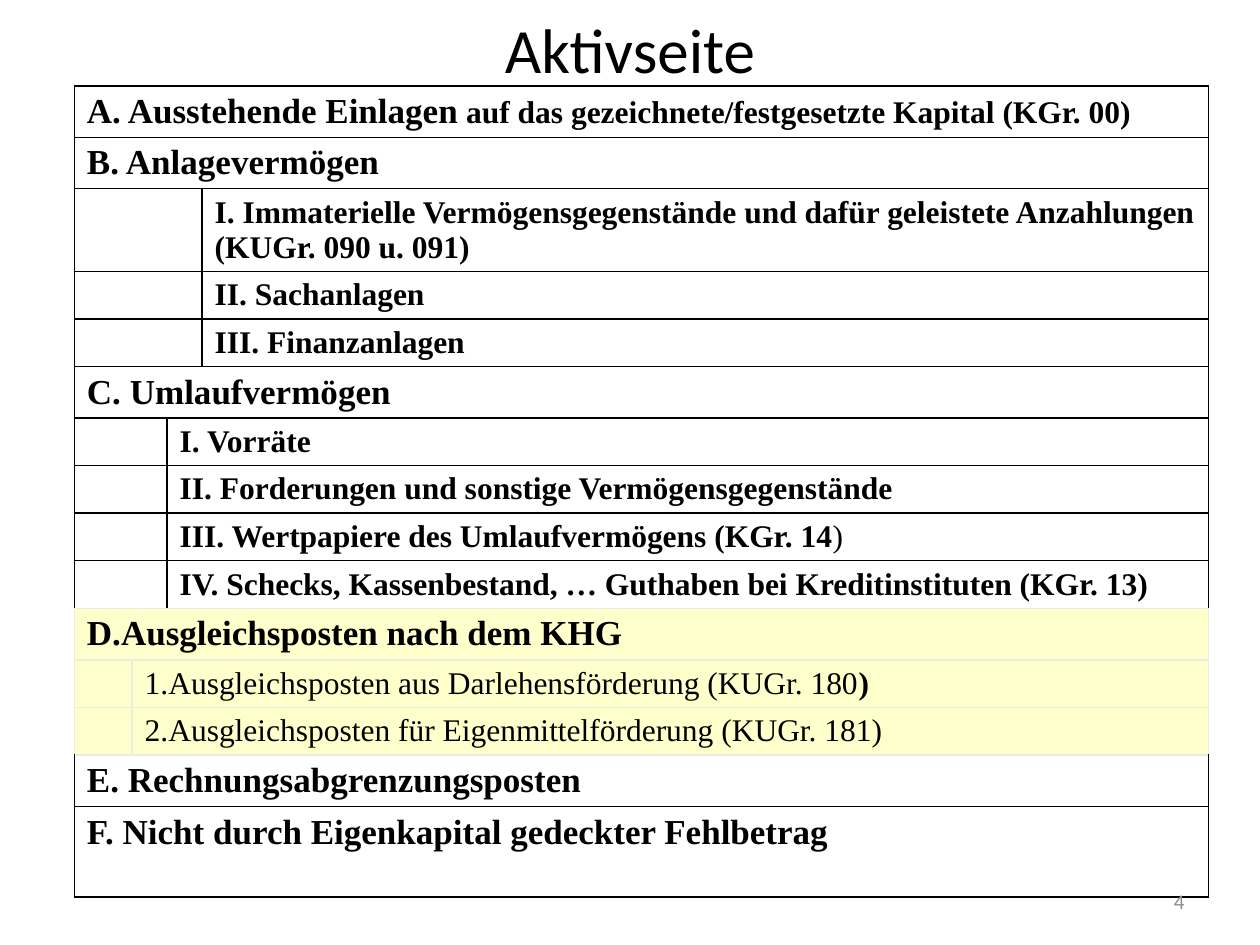
import pptx
import pptx.util
import pptx.oxml
import pptx.oxml.ns
import pptx.dml.color
import pptx.enum.text

Pt = pptx.util.Pt
ALIGN = pptx.enum.text.PP_ALIGN
MIDDLE = pptx.enum.text.MSO_ANCHOR.MIDDLE

COLORS = {"text": "000000", "line": "000000", "pale_line": "EEECE1",
          "highlight": "FFFFCC", "number": "8C8C8C"}
COLUMN_WIDTHS = [33, 20, 20, 575]
HEADING, ITEM = 20, 18
ROW_HEIGHTS = {HEADING: 29.4, ITEM: 27.2}
TALL_ROWS = {2: 47.2, 14: 51.7}
HIGHLIGHTED_ROWS = range(10, 13)

BALANCE_ROWS = [
    (0, [("A. Ausstehende Einlagen", HEADING, True),
         (" auf das gezeichnete/festgesetzte Kapital (KGr. 00)", ITEM, True)]),
    (0, [("B. Anlagevermögen", HEADING, True)]),
    (3, [("I. Immaterielle Vermögensgegenstände und dafür geleistete "
          "Anzahlungen (KUGr. 090 u. 091)", ITEM, True)]),
    (3, [("II. Sachanlagen", ITEM, True)]),
    (3, [("III. Finanzanlagen", ITEM, True)]),
    (0, [("C. Umlaufvermögen", HEADING, True)]),
    (2, [("I. Vorräte", ITEM, True)]),
    (2, [("II. Forderungen und sonstige Vermögensgegenstände", ITEM, True)]),
    (2, [("III. Wertpapiere des Umlaufvermögens (KGr. 14", ITEM, True),
         (")", ITEM, False)]),
    (2, [("IV. Schecks, Kassenbestand, … Guthaben bei Kreditinstituten "
          "(KGr. 13)", ITEM, True)]),
    (0, [("D.Ausgleichsposten nach dem KHG", HEADING, True)]),
    (1, [("1.Ausgleichsposten aus Darlehensförderung (KUGr. 180", ITEM, False),
         (")", ITEM, True)]),
    (1, [("2.Ausgleichsposten für Eigenmittelförderung (KUGr. 181)", ITEM, False)]),
    (0, [("E. Rechnungsabgrenzungsposten", HEADING, True)]),
    (0, [("F. Nicht durch Eigenkapital gedeckter Fehlbetrag", HEADING, True)]),
]


class SlideBuilder:
    heading_font = "Calibri"
    table_font = "Times New Roman"

    def __init__(self, slide):
        self.slide = slide

    def add_run(self, paragraph, text, size, font, color="text", bold=False):
        run = paragraph.add_run()
        run.text = text
        run.font.size = Pt(size)
        run.font.name = font
        run.font.bold = bold
        run.font.color.rgb = pptx.dml.color.RGBColor.from_string(COLORS[color])

    def title(self, text, left, top, width, height):
        heading = self.slide.shapes.title
        heading.left, heading.top = Pt(left), Pt(top)
        heading.width, heading.height = Pt(width), Pt(height)
        heading.text_frame.vertical_anchor = MIDDLE
        paragraph = heading.text_frame.paragraphs[0]
        paragraph.alignment = ALIGN.CENTER
        self.add_run(paragraph, text, 36, self.heading_font)

    def page_number(self, text, left, top, width, height):
        frame = self.slide.shapes.add_textbox(
            Pt(left), Pt(top), Pt(width), Pt(height)).text_frame
        frame.word_wrap = True
        frame.vertical_anchor = MIDDLE
        paragraph = frame.paragraphs[0]
        paragraph.alignment = ALIGN.RIGHT
        self.add_run(paragraph, text, 12, self.heading_font, "number")

    def borders(self, cell, row):
        neighbours = {"lnL": row, "lnR": row, "lnT": row - 1, "lnB": row + 1}
        properties = cell._tc.get_or_add_tcPr()
        for side, neighbour in neighbours.items():
            pale = row in HIGHLIGHTED_ROWS or neighbour in HIGHLIGHTED_ROWS
            color = COLORS["pale_line" if pale else "line"]
            properties.append(pptx.oxml.parse_xml(
                f'<a:{side} {pptx.oxml.ns.nsdecls("a")} w="{Pt(1)}">'
                f'<a:solidFill><a:srgbClr val="{color}"/></a:solidFill></a:{side}>'))

    def cell_style(self, cell, row):
        self.borders(cell, row)
        if row in HIGHLIGHTED_ROWS:
            cell.fill.solid()
            cell.fill.fore_color.rgb = pptx.dml.color.RGBColor.from_string(
                COLORS["highlight"])
        else:
            cell.fill.background()
        cell.margin_top = cell.margin_bottom = 0

    def balance_table(self, rows, left, top):
        heights = [TALL_ROWS.get(index, ROW_HEIGHTS[runs[0][1]])
                   for index, (_, runs) in enumerate(rows)]
        last = len(COLUMN_WIDTHS) - 1
        table = self.slide.shapes.add_table(
            len(rows), len(COLUMN_WIDTHS), Pt(left), Pt(top),
            Pt(sum(COLUMN_WIDTHS)), Pt(sum(heights))).table
        table.first_row = table.horz_banding = False
        for column, width in zip(table.columns, COLUMN_WIDTHS):
            column.width = Pt(width)
        for index, (indent, runs) in enumerate(rows):
            table.rows[index].height = Pt(heights[index])
            for cell in table.rows[index].cells:
                self.cell_style(cell, index)
            if indent > 1:
                table.cell(index, 0).merge(table.cell(index, indent - 1))
            entry = table.cell(index, indent)
            if indent < last:
                entry.merge(table.cell(index, last))
            entry.margin_top = entry.margin_bottom = Pt(3.6)
            for text, size, bold in runs:
                self.add_run(entry.text_frame.paragraphs[0], text, size,
                             self.table_font, bold=bold)


def main():
    presentation = pptx.Presentation()
    presentation.slide_width, presentation.slide_height = Pt(720), Pt(540)
    title_only = presentation.slide_layouts[5]
    builder = SlideBuilder(presentation.slides.add_slide(title_only))
    builder.title("Aktivseite", 0, 0, 720, 55)
    builder.balance_table(BALANCE_ROWS, 42.5, 49)
    builder.page_number("4", 516, 500.5, 168, 28.8)
    presentation.save("out.pptx")


if __name__ == "__main__":
    main()
